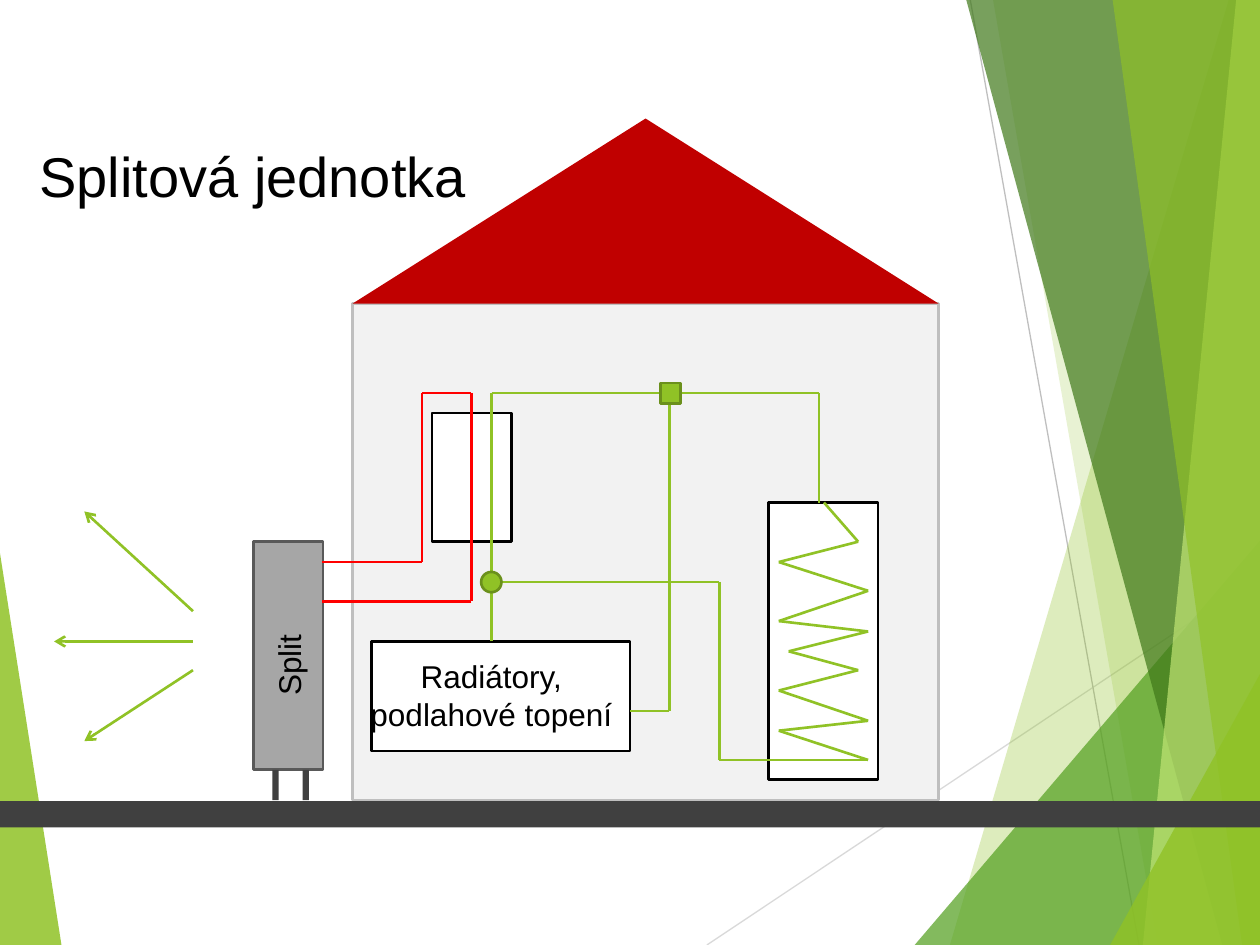
from itertools import pairwise

from lxml import etree
from pptx import Presentation
from pptx import util as u
from pptx.dml.color import RGBColor
from pptx.enum import shapes, text
from pptx.oxml import ns

COLORS = {
    "green": "90C226", "leaf": "54A021", "forest": "3F7819", "lime": "C0E474",
    "moss": "6B901C", "wall": "F2F2F2", "silver": "BFBFBF", "mist": "D9D9D9",
    "roof": "C00000", "red": "FF0000", "unit": "A6A6A6", "edge": "595959",
    "ground": "404040", "white": "FFFFFF", "black": "000000",
}
WIDTH, HEIGHT = 25.4, 19.05
RECT = shapes.MSO_SHAPE.RECTANGLE


def apply_format(target, values):
    for name, value in values.items():
        setattr(target, name, value)


class SlideBuilder:
    font = {"name": "Arial", "size": u.Pt(18)}
    frame = {"word_wrap": True, "vertical_anchor": text.MSO_ANCHOR.MIDDLE}
    stroke = 1.5

    def __init__(self, slide):
        self.slide = slide

    def color(self, name):
        return RGBColor.from_string(COLORS[name])

    def paint(self, shape, fill, line=None, opacity=100):
        shape.shadow.inherit = False
        shape.fill.solid()
        shape.fill.fore_color.rgb = self.color(fill)
        if opacity < 100:
            tone = shape.fill._xPr.find(".//" + ns.qn("a:srgbClr"))
            etree.SubElement(tone, ns.qn("a:alpha"), val=str(opacity * 1000))
        if line:
            shape.line.color.rgb = self.color(line)
            shape.line.width = u.Pt(self.stroke)
        else:
            shape.line.fill.background()

    def block(self, box, fill, line=None, kind=RECT):
        shape = self.slide.shapes.add_shape(kind, *map(u.Cm, box))
        self.paint(shape, fill, line)

    def facet(self, points, fill, opacity):
        start, *rest = [(u.Cm(x), u.Cm(y)) for x, y in points]
        outline = self.slide.shapes.build_freeform(*start)
        outline.add_line_segments(rest)
        self.paint(outline.convert_to_shape(), fill, opacity=opacity)

    def line(self, start, end, color, width=stroke, arrow=False):
        connector = self.slide.shapes.add_connector(
            shapes.MSO_CONNECTOR.STRAIGHT, *map(u.Cm, (*start, *end)))
        connector.line.color.rgb = self.color(color)
        connector.line.width = u.Pt(width)
        if arrow:
            etree.SubElement(connector.line._ln, ns.qn("a:tailEnd"), type="arrow")
        etree.SubElement(connector._element.spPr, ns.qn("a:effectLst"))

    def pipe(self, points, color):
        for start, end in pairwise(points):
            self.line(start, end, color)

    def fill_text(self, shape, words, **changes):
        apply_format(shape.text_frame, self.frame)
        paragraph = shape.text_frame.paragraphs[0]
        paragraph.alignment = text.PP_ALIGN.CENTER
        run = paragraph.add_run()
        run.text = words
        apply_format(run.font, self.font | changes)
        run.font.color.rgb = self.color("black")

    def label(self, box, words, rotation=0):
        shape = self.slide.shapes.add_textbox(*map(u.Cm, box))
        shape.rotation = rotation
        self.fill_text(shape, words)

    def title(self, box, words):
        heading = self.slide.shapes.title
        place = dict(zip(("left", "top", "width", "height"), map(u.Cm, box)))
        apply_format(heading, place)
        self.fill_text(heading, words, size=u.Pt(32))


def draw_backdrop(builder):
    builder.facet([(0, 11.15), (1.24, HEIGHT), (0, HEIGHT)], "green", 85)
    builder.line((14.25, HEIGHT), (WIDTH, 11.61), "mist", 0.75)
    builder.line((19.56, 0), (22.96, HEIGHT), "silver", 0.75)
    facets = [
        (24.77, 0, 19.15, "green", 30),
        (20.02, 0, 23.34, "green", 20),
        (WIDTH, 10.9, 18.44, "leaf", 72),
        (19.48, 0, 24.64, "forest", 70),
        (24.92, 0, 23.04, "lime", 70),
        (22.43, 0, 25.04, "green", 65),
        (WIDTH, 13.59, 22.38, "green", 80),
    ]
    for top_x, top_y, foot_x, fill, opacity in facets:
        corners = [(top_x, top_y), (foot_x, HEIGHT), (WIDTH, HEIGHT), (WIDTH, top_y)]
        builder.facet(corners, fill, opacity)


def draw_house(builder):
    builder.block((7.11, 6.12, 11.81, 10.01), "wall", "silver")
    builder.block((7.11, 2.39, 11.81, 3.73), "roof",
                  kind=shapes.MSO_SHAPE.ISOSCELES_TRIANGLE)
    builder.block((5.11, 10.92, 1.4, 4.6), "unit", "edge")
    builder.block((0, 16.15, WIDTH, 0.53), "ground")
    for leg_x in (5.49, 6.1):
        builder.block((leg_x, 15.52, 0.13, 0.61), "ground")
    radiators = (7.49, 12.93, 5.21, 2.21)
    tank = (15.49, 10.13, 2.21, 5.59)
    exchanger = (8.71, 8.33, 1.6, 2.59)
    for appliance in (radiators, tank, exchanger):
        builder.block(appliance, "white", "black")
    builder.label((7.01, 13.11, 5.79, 1.8), "Radiátory, podlahové topení")
    builder.label((2.92, 12.9, 5.79, 1.02), "Split", 270)


def draw_airflow(builder):
    for start_y, tip in ((12.93, (1.09, 12.93)), (12.32, (1.7, 10.31)),
                         (13.51, (1.7, 14.94))):
        builder.line((3.89, start_y), tip, "green", arrow=True)


def draw_piping(builder):
    top, riser, junction = 7.92, 9.91, 13.49
    refrigerant = [(6.5, 11.33), (8.51, 11.33), (8.51, top), (9.5, top),
                   (9.5, 12.12), (6.5, 12.12)]
    supply = [(riser, 12.93), (riser, top), (16.51, top), (16.51, 10.13)]
    radiator_branch = [(junction, top), (junction, 14.33), (12.7, 14.33)]
    tank_return = [(riser, 11.73), (14.5, 11.73), (14.5, 15.32), (17.5, 15.32)]
    coil = [(17.5, 15.32), (15.7, 14.73), (17.5, 14.53), (15.7, 13.92),
            (17.3, 13.51), (15.9, 13.13), (17.5, 12.73), (15.7, 12.52),
            (17.5, 11.91), (15.7, 11.33), (17.3, 10.92), (16.61, 10.13)]
    builder.pipe(refrigerant, "red")
    for route in (supply, radiator_branch, tank_return, coil):
        builder.pipe(route, "green")
    builder.block((9.7, 11.53, 0.41, 0.41), "green", "moss", shapes.MSO_SHAPE.OVAL)
    builder.block((13.31, 7.72, 0.41, 0.41), "green", "moss")


def main():
    deck = Presentation()
    apply_format(deck, {"slide_width": u.Cm(WIDTH), "slide_height": u.Cm(HEIGHT)})
    builder = SlideBuilder(deck.slides.add_slide(deck.slide_layouts[5]))
    draw_backdrop(builder)
    draw_house(builder)
    draw_airflow(builder)
    draw_piping(builder)
    builder.title((-0.3, 2.72, 10.8, 1.63), "Splitová jednotka")
    deck.save("out.pptx")


if __name__ == "__main__":
    main()
